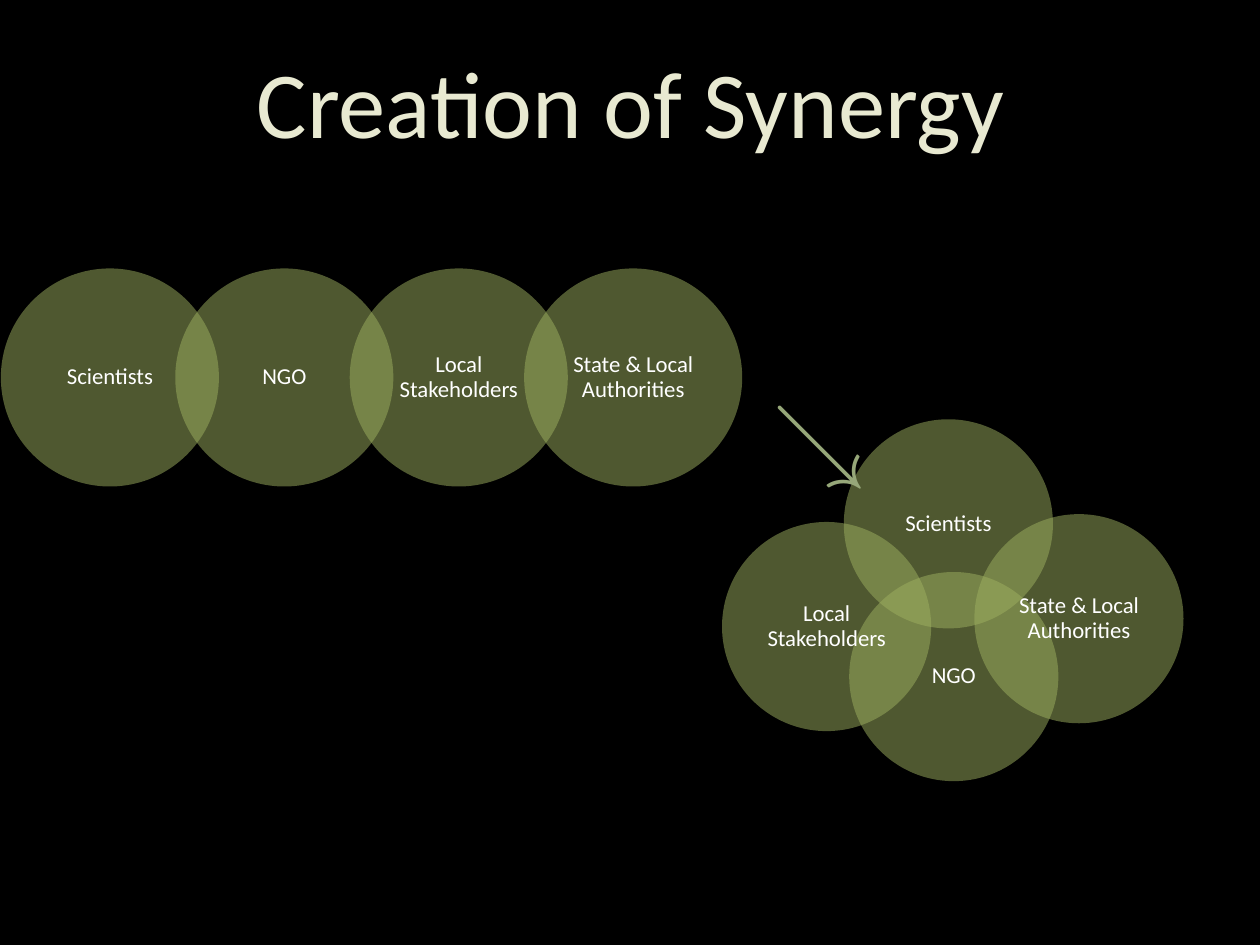
from pptx import Presentation
from pptx.dml.color import RGBColor
from pptx.enum.shapes import MSO_SHAPE
from pptx.enum.text import MSO_ANCHOR, PP_ALIGN
from pptx.oxml.ns import qn
from pptx.util import Pt
from lxml.etree import SubElement

BLACK = RGBColor(0x00, 0x00, 0x00)
WHITE = RGBColor(0xFF, 0xFF, 0xFF)
CREAM = RGBColor(0xE8, 0xE9, 0xD1)
OLIVE = RGBColor(0x9E, 0xB0, 0x60)
SAGE = RGBColor(0x96, 0xA7, 0x79)

# Content: separate actors in a row, then the same actors overlapping
TITLE = "Creation of Synergy"
ARROW = "↘"
ACTORS = ["Scientists", "NGO", "Local Stakeholders", "State & Local Authorities"]
ROW_LEFT, ROW_TOP, ROW_DIAMETER = 0.5, 153.4, 124.6
ROW_STEP = 0.8 * ROW_DIAMETER
CLUSTER_DIAMETER = 119.5
CLUSTER = [
    ("Scientists", 482.2, 239.6),
    ("NGO", 485.3, 326.9),
    ("Local Stakeholders", 412.6, 298.3),
    ("State & Local Authorities", 556.8, 293.8),
]


def write(frame, text, font_name, size, color, bold=False):
    paragraph = frame.paragraphs[0]
    paragraph.alignment = PP_ALIGN.CENTER
    run = paragraph.add_run()
    run.text = text
    run.font.name = font_name
    run.font.size = Pt(size)
    run.font.bold = bold
    run.font.color.rgb = color
    return paragraph


def add_circle(group, label, left, top, diameter):
    circle = group.shapes.add_shape(
        MSO_SHAPE.OVAL, Pt(left), Pt(top), Pt(diameter), Pt(diameter))
    circle.shadow.inherit = False
    circle.line.fill.background()
    circle.fill.solid()
    circle.fill.fore_color.rgb = OLIVE
    # Half-transparent, so overlaps show
    tint = circle.fill._xPr.find(qn("a:solidFill"))[0]
    SubElement(tint, qn("a:alpha"), val="50000")
    frame = circle.text_frame
    frame.word_wrap = True
    frame.vertical_anchor = MSO_ANCHOR.MIDDLE
    frame.margin_left = frame.margin_right = Pt(6.5)
    frame.margin_top = frame.margin_bottom = Pt(1.3)
    write(frame, label, "Calibri", 13, WHITE).line_spacing = 0.9


prs = Presentation()
prs.slide_width, prs.slide_height = Pt(720), Pt(540)
slide = prs.slides.add_slide(prs.slide_layouts[6])
slide.background.fill.solid()
slide.background.fill.fore_color.rgb = BLACK

# Title
title = slide.shapes.add_textbox(Pt(38.9), Pt(21.6), Pt(643), Pt(72)).text_frame
title.word_wrap = True
title.vertical_anchor = MSO_ANCHOR.BOTTOM
write(title, TITLE, "Calibri", 54, CREAM)

# Row of actors
row = slide.shapes.add_group_shape()
for i, actor in enumerate(ACTORS):
    add_circle(row, actor, ROW_LEFT + i * ROW_STEP, ROW_TOP, ROW_DIAMETER)

# Cluster of actors
cluster = slide.shapes.add_group_shape()
for actor, left, top in CLUSTER:
    add_circle(cluster, actor, left, top, CLUSTER_DIAMETER)

# Arrow from row to cluster
arrow = slide.shapes.add_textbox(Pt(434.2), Pt(213.8), Pt(61.9), Pt(72.7)).text_frame
arrow.word_wrap = False
write(arrow, ARROW, "Arial", 54, SAGE, bold=True)

prs.save("out.pptx")
